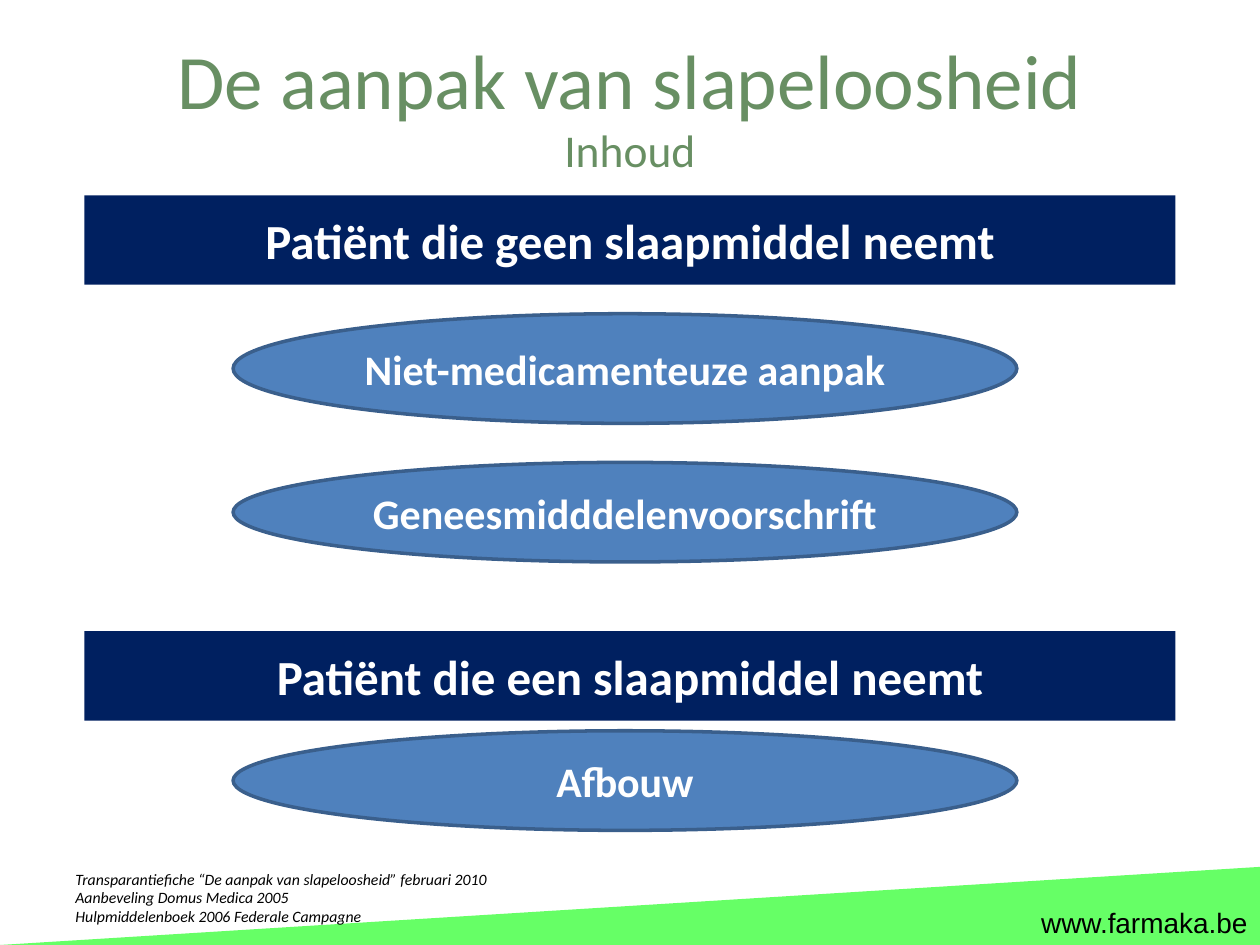
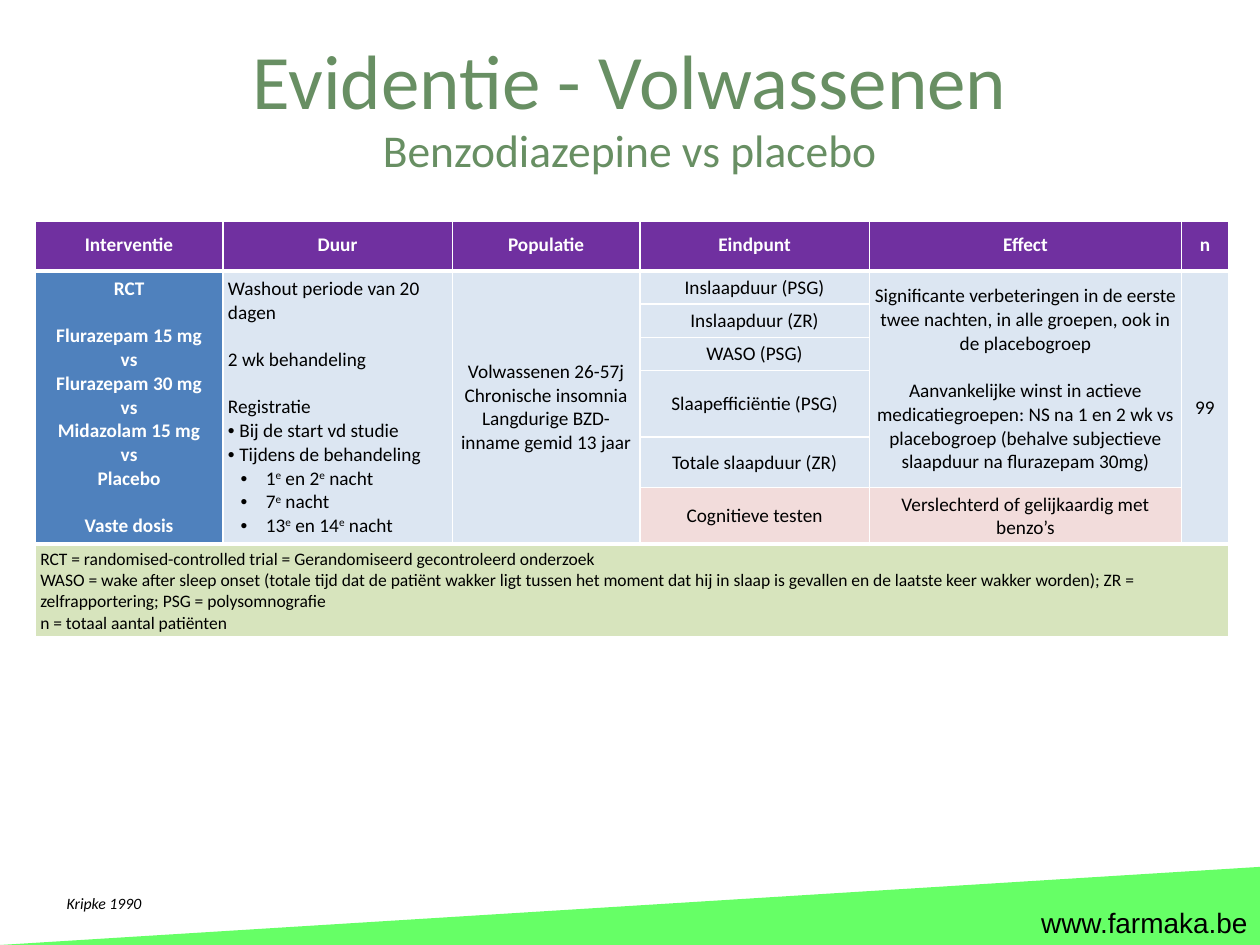
from dataclasses import dataclass

from lxml.etree import SubElement
from pptx import Presentation
from pptx.dml.color import RGBColor
from pptx.enum.shapes import MSO_SHAPE as Shape
from pptx.enum.text import MSO_ANCHOR as Anchor, PP_ALIGN as Align
from pptx.oxml.ns import qn
from pptx.util import Inches, Pt


@dataclass(frozen=True)
class Theme:
    font: str = "Calibri"
    web_font: str = "Arial"
    white: str = "FFFFFF"
    black: str = "000000"
    title: str = "688F63"
    wedge: str = "66FF66"
    banner: str = "002060"
    oval: str = "4F81BD"
    oval_line: str = "3A5F8C"
    header: str = "7030A0"
    result: str = "DCE6F2"
    worse: str = "F2DCDB"
    legend: str = "D7E4BD"
    title_size: float = 44
    subtitle_size: float = 26
    banner_size: float = 28
    oval_size: float = 24
    web_size: float = 16
    source_size: float = 9
    cell_size: float = 11
    legend_size: float = 10


@dataclass(frozen=True)
class Line:
    """One paragraph; level 0 has no bullet, and ^ starts and ends superscript."""
    text: str
    level: int = 0
    gap: bool = False


THEME = Theme()
BULLET_INDENTS = {1: (0.09, -0.09), 2: (0.3, -0.2)}
COLUMN_WIDTHS = [1.49, 1.82, 1.49, 1.82, 2.48, 0.37]
ROW_HEIGHTS = [0.41, 0.26, 0.26, 0.26, 0.53, 0.40, 0.43, 0.74]
HEADINGS = ["Interventie", "Duur", "Populatie", "Eindpunt", "Effect", "n"]
ENDPOINTS = ["Inslaapduur (PSG)", "Inslaapduur (ZR)", "WASO (PSG)",
             "Slaapefficiëntie (PSG)", "Totale slaapduur (ZR)"]
INTERVENTION = [
    Line("RCT"), Line("Flurazepam 15 mg", gap=True), Line("vs"),
    Line("Flurazepam 30 mg"), Line("vs"), Line("Midazolam 15 mg"),
    Line("vs"), Line("Placebo"), Line("Vaste dosis", gap=True),
]
DURATION = [
    Line("Washout periode van 20 dagen"),
    Line("2 wk behandeling", gap=True),
    Line("Registratie", gap=True),
    Line("Bij de start vd studie", 1),
    Line("Tijdens de behandeling", 1),
    Line("1^e^ en 2^e^ nacht", 2),
    Line("7^e^ nacht", 2),
    Line("13^e^ en 14^e^ nacht", 2),
]
POPULATION = [Line("Volwassenen 26-57j"), Line("Chronische insomnia"),
              Line("Langdurige BZD-inname gemid 13 jaar")]
EFFECT = [
    Line("Significante verbeteringen in de eerste twee nachten, in alle "
         "groepen, ook in de placebogroep"),
    Line("Aanvankelijke winst in actieve medicatiegroepen: NS na 1 en 2 wk vs "
         "placebogroep (behalve subjectieve slaapduur na flurazepam 30mg)", gap=True),
]
LEGEND = [
    Line("RCT = randomised-controlled trial = Gerandomiseerd gecontroleerd onderzoek"),
    Line("WASO = wake after sleep onset (totale tijd dat de patiënt wakker ligt "
         "tussen het moment dat hij in slaap is gevallen en de laatste keer wakker "
         "worden); ZR = zelfrapportering; PSG = polysomnografie"),
    Line("n = totaal aantal patiënten"),
]


def rgb(color):
    return RGBColor.from_string(color)


def place(left, top, width, height):
    return [Inches(value) for value in (left, top, width, height)]


def style_text(frame, size, color, align=Align.LEFT, font=THEME.font,
               bold=False, italic=False):
    frame.word_wrap = True
    for para in frame.paragraphs:
        para.alignment = align
        for span in para.runs:
            span.font.name = font
            span.font.size = Pt(size)
            span.font.color.rgb = rgb(color)
            span.font.bold = bold
            span.font.italic = italic


def add_text(slide, position, text, size, color, **style):
    box = slide.shapes.add_textbox(*place(*position))
    box.text_frame.text = text
    style_text(box.text_frame, size, color, **style)
    return box


def add_filled_shape(slide, kind, position, fill, line=None):
    shape = slide.shapes.add_shape(kind, *place(*position))
    shape.shadow.inherit = False
    shape.fill.solid()
    shape.fill.fore_color.rgb = rgb(fill)
    if line:
        shape.line.color.rgb = rgb(line)
        shape.line.width = Pt(2)
    else:
        shape.line.fill.background()
    return shape


def label(shape, text, size):
    frame = shape.text_frame
    frame.text = text
    frame.vertical_anchor = Anchor.MIDDLE
    style_text(frame, size, THEME.white, Align.CENTER, bold=True)


def add_banner(slide, top, text):
    banner = add_filled_shape(slide, Shape.RECTANGLE, (0.67, top, 8.66, 0.71),
                              THEME.banner)
    label(banner, text, THEME.banner_size)


def add_oval(slide, top, height, text):
    oval = add_filled_shape(slide, Shape.OVAL, (1.85, top, 6.22, height),
                            THEME.oval, THEME.oval_line)
    label(oval, text, THEME.oval_size)


def add_master_footer(deck, slide):
    """Draw the footer on a slide, then move it to the master that all slides share."""
    wedge = add_filled_shape(slide, Shape.RIGHT_TRIANGLE, (0, 6.88, 10, 0.62),
                             THEME.wedge)
    wedge.element.spPr.get_or_add_xfrm().set("flipH", "1")
    address = add_text(slide, (7.97, 7.14, 2.03, 0.36), "www.farmaka.be",
                       THEME.web_size, THEME.black, align=Align.RIGHT,
                       font=THEME.web_font)
    for shape in (wedge, address):
        deck.slide_master.shapes.element.append(shape.element)


def add_titled_slide(deck, title, subtitle):
    slide = deck.slides.add_slide(deck.slide_layouts.get_by_name("Title Only"))
    heading = slide.shapes.title
    heading.left, heading.top, heading.width, heading.height = place(0, 0, 10, 1.25)
    heading.text_frame.text = title
    heading.text_frame.vertical_anchor = Anchor.MIDDLE
    style_text(heading.text_frame, THEME.title_size, THEME.title, Align.CENTER)
    add_text(slide, (0, 0.92, 10, 0.54), subtitle, THEME.subtitle_size,
             THEME.title, align=Align.CENTER)
    return slide


def add_sources(slide, left, top, height, text):
    add_text(slide, (left, top, 6.75, height), text, THEME.source_size,
             THEME.black, italic=True)


def add_bullet(para, level):
    margin, indent = BULLET_INDENTS[level]
    properties = para._p.get_or_add_pPr()
    properties.set("marL", str(Inches(margin)))
    properties.set("indent", str(Inches(indent)))
    SubElement(properties, qn("a:buFont"), typeface="Arial")
    SubElement(properties, qn("a:buChar"), char="•")


def write_line(para, line):
    if line.level:
        add_bullet(para, line.level)
    if line.gap:
        para.space_before = Pt(13.4)
    for index, part in enumerate(line.text.split("^")):
        span = para.add_run()
        span.text = part
        if index % 2:
            span._r.get_or_add_rPr().set("baseline", "30000")


def draw_borders(cell, top, bottom):
    properties = cell._tc.get_or_add_tcPr()
    for side, width in (("L", 1), ("R", 1), ("T", top), ("B", bottom)):
        border = SubElement(properties, qn(f"a:ln{side}"), w=str(Pt(width)))
        fill = SubElement(border, qn("a:solidFill"))
        SubElement(fill, qn("a:srgbClr"), val=THEME.white)


def fill_cell(cell, lines, fill, size=THEME.cell_size, color=THEME.black,
              align=Align.CENTER, bold=False):
    cell.fill.solid()
    cell.fill.fore_color.rgb = rgb(fill)
    frame = cell.text_frame
    for index, line in enumerate(lines):
        write_line(frame.add_paragraph() if index else frame.paragraphs[0], line)
    style_text(frame, size, color, align, bold=bold)


def add_grid(slide):
    """Add the empty table with its sizes, margins, borders and merged cells."""
    table = slide.shapes.add_table(
        len(ROW_HEIGHTS), len(COLUMN_WIDTHS),
        *place(0.28, 1.74, sum(COLUMN_WIDTHS), sum(ROW_HEIGHTS))).table
    table.horz_banding = False
    for column, width in zip(table.columns, COLUMN_WIDTHS):
        column.width = Inches(width)
    last = len(ROW_HEIGHTS) - 1
    for index, (row, height) in enumerate(zip(table.rows, ROW_HEIGHTS)):
        row.height = Inches(height)
        for cell in row.cells:
            cell.margin_left = cell.margin_right = Inches(0.04)
            cell.margin_top = cell.margin_bottom = Inches(0.04)
            cell.vertical_anchor = Anchor.MIDDLE
            draw_borders(cell, top=3 if index in (0, 1, last) else 1,
                         bottom=3 if index in (0, last - 1, last) else 1)
    for column in (0, 1, 2, 5):
        table.cell(1, column).merge(table.cell(6, column))
    table.cell(1, 4).merge(table.cell(5, 4))
    table.cell(7, 0).merge(table.cell(7, 5))
    return table


def add_evidence_table(slide):
    table = add_grid(slide)
    for column, heading in enumerate(HEADINGS):
        fill_cell(table.cell(0, column), [Line(heading)], THEME.header,
                  color=THEME.white, bold=True)
    fill_cell(table.cell(1, 0), INTERVENTION, THEME.oval,
              color=THEME.white, bold=True)
    fill_cell(table.cell(1, 1), DURATION, THEME.result, align=Align.LEFT)
    fill_cell(table.cell(1, 2), POPULATION, THEME.result)
    for row, endpoint in enumerate(ENDPOINTS, start=1):
        fill_cell(table.cell(row, 3), [Line(endpoint)], THEME.result)
    fill_cell(table.cell(1, 4), EFFECT, THEME.result)
    fill_cell(table.cell(1, 5), [Line("99")], THEME.result)
    fill_cell(table.cell(6, 3), [Line("Cognitieve testen")], THEME.worse)
    fill_cell(table.cell(6, 4), [Line("Verslechterd of gelijkaardig met benzo’s")],
              THEME.worse)
    fill_cell(table.cell(7, 0), LEGEND, THEME.legend, size=THEME.legend_size,
              align=Align.LEFT)


def main():
    deck = Presentation()
    deck.slide_width, deck.slide_height = Inches(10), Inches(7.5)

    contents = add_titled_slide(deck, "De aanpak van slapeloosheid", "Inhoud")
    add_master_footer(deck, contents)
    add_sources(contents, 0.5, 6.85, 0.56,
                "Transparantiefiche “De aanpak van slapeloosheid” februari 2010\n"
                "Aanbeveling Domus Medica 2005\n"
                "Hulpmiddelenboek 2006 Federale Campagne")
    add_banner(contents, 1.55, "Patiënt die geen slaapmiddel neemt")
    add_oval(contents, 2.49, 0.87, "Niet-medicamenteuze aanpak")
    add_oval(contents, 3.67, 0.79, "Geneesmidddelenvoorschrift")
    add_banner(contents, 5.01, "Patiënt die een slaapmiddel neemt")
    add_oval(contents, 5.8, 0.79, "Afbouw")

    evidence = add_titled_slide(deck, "Evidentie - Volwassenen",
                                "Benzodiazepine vs placebo")
    add_sources(evidence, 0.43, 7.04, 0.25, "Kripke 1990")
    add_evidence_table(evidence)

    deck.save("out.pptx")


if __name__ == "__main__":
    main()
